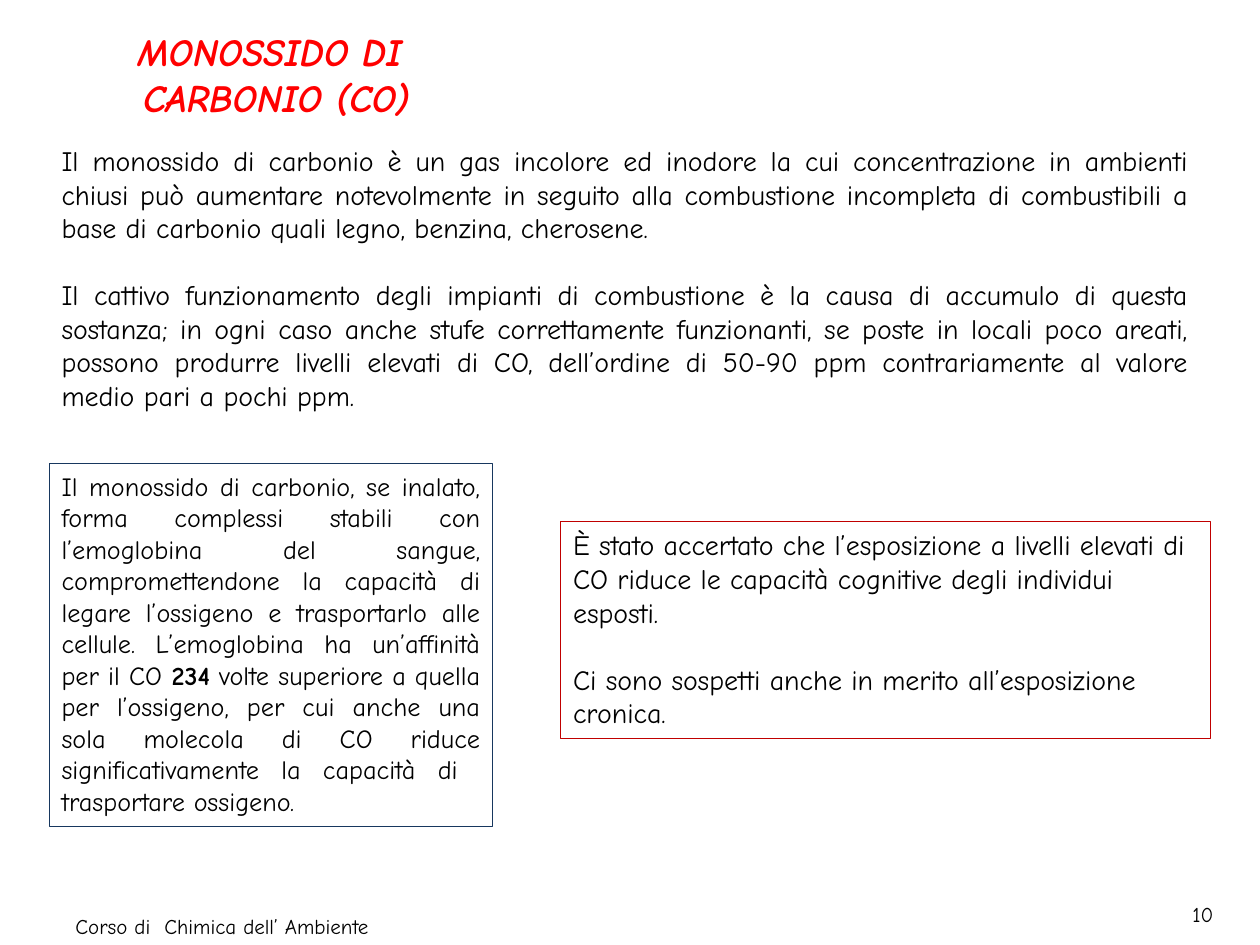
from pptx import Presentation
from pptx.dml.color import RGBColor
from pptx.enum.shapes import MSO_SHAPE as Shape
from pptx.enum.text import MSO_ANCHOR as Anchor, MSO_AUTO_SIZE as Fit, PP_ALIGN as Align
from pptx.util import Inches, Pt

RED = RGBColor(0xFF, 0x00, 0x00)
DARK_RED = RGBColor(0xC0, 0x00, 0x00)
NAVY = RGBColor(0x17, 0x37, 0x5E)
BLACK = RGBColor(0x00, 0x00, 0x00)
COLUMNS, ROWS = 100, 75
LINE_PITCH = 1.2

TITLE = [["MONOSSIDO DI \vCARBONIO (CO)"]]
SOURCES = [
    ["Il monossido di carbonio è un gas incolore ed inodore la cui concentrazione in "
     "ambienti chiusi può aumentare notevolmente in seguito alla combustione incompleta "
     "di combustibili a base di carbonio quali legno, benzina, cherosene."],
    ["Il cattivo funzionamento degli impianti di combustione è la causa di accumulo di "
     "questa sostanza; in ogni caso anche stufe correttamente funzionanti, se poste in "
     "locali poco areati, possono produrre livelli elevati di CO, dell’ordine di 50-90 ppm "
     "contrariamente al valore medio pari a pochi ppm."],
]
HEMOGLOBIN = [
    ["Il monossido di carbonio, se inalato, forma complessi stabili con l’emoglobina del "
     "sangue, compromettendone la capacità di legare l’ossigeno e trasportarlo alle "
     "cellule. L’emoglobina ha un’affinità per il CO ",
     ("234", {"bold": True}),
     " volte superiore a quella per l’ossigeno, per cui anche una sola molecola di CO "
     "riduce significativamente la capacità di  trasportare ossigeno."],
]
EXPOSURE = [
    ["È stato accertato che l’esposizione a livelli elevati di CO riduce le capacità "
     "cognitive degli individui esposti."],
    ["Ci sono sospetti anche in merito all’esposizione cronica."],
]


class SlideBuilder:
    """Holds the text style and the current page, placing elements on a grid."""

    def __init__(self, deck, font="Comic Neue"):
        self.deck = deck
        self.font = font
        self.page = deck.slides.add_slide(deck.slide_layouts[6])

    def place(self, left, top, width, height):
        column, row = self.deck.slide_width / COLUMNS, self.deck.slide_height / ROWS
        return [int(n) for n in (left * column, top * row, width * column, height * row)]

    def fill_text(self, box, paragraphs, size, color=BLACK, align=Align.LEFT,
                  anchor=Anchor.TOP, fit=Fit.NONE, **styles):
        frame = box.text_frame
        settings = {"word_wrap": True, "auto_size": fit, "vertical_anchor": anchor}
        for name, value in settings.items():
            setattr(frame, name, value)
        for index, pieces in enumerate(paragraphs):
            para = frame.add_paragraph() if index else frame.paragraphs[0]
            para.alignment = align
            para.space_before = Pt(size * LINE_PITCH if index else 0)
            for piece in pieces:
                words, extra = (piece, {}) if isinstance(piece, str) else piece
                self.add_words(para, words, {"name": self.font, "size": Pt(size),
                                             **styles, **extra}, color)

    def add_words(self, para, words, styles, color):
        for index, line in enumerate(words.split("\v")):
            if index:
                para.add_line_break()
            span = para.add_run()
            span.text = line
            for name, value in styles.items():
                setattr(span.font, name, value)
            span.font.color.rgb = color

    def text(self, area, paragraphs, size, **styles):
        box = self.page.shapes.add_textbox(*self.place(*area))
        self.fill_text(box, paragraphs, size, **styles)

    def framed(self, area, outline, paragraphs, size, **styles):
        box = self.page.shapes.add_shape(Shape.RECTANGLE, *self.place(*area))
        box.shadow.inherit = False
        box.fill.background()
        box.line.color.rgb = outline
        box.line.width = Pt(0.75)
        self.fill_text(box, paragraphs, size, fit=Fit.SHAPE_TO_FIT_TEXT, **styles)


def main():
    deck = Presentation()
    deck.slide_width, deck.slide_height = Inches(10), Inches(7.5)
    slide = SlideBuilder(deck)
    slide.text((8, 1.3, 27.9, 9.2), TITLE, 22, color=RED, align=Align.CENTER,
               anchor=Anchor.MIDDLE, bold=True, italic=True)
    slide.text((91.7, 71.1, 5.6, 3.4), [["10"]], 12, align=Align.RIGHT)
    slide.text((5, 72, 30.8, 3.4), [["Corso di  Chimica dell’ Ambiente"]], 12)
    slide.text((3.9, 10.9, 91.4, 22.6), SOURCES, 16, align=Align.JUSTIFY,
               fit=Fit.SHAPE_TO_FIT_TEXT)
    slide.framed((3.9, 36.8, 35.2, 28.8), NAVY, HEMOGLOBIN, 15, align=Align.JUSTIFY)
    slide.framed((44.5, 41.4, 51.6, 17.2), DARK_RED, EXPOSURE, 16)
    deck.save("out.pptx")


if __name__ == "__main__":
    main()
